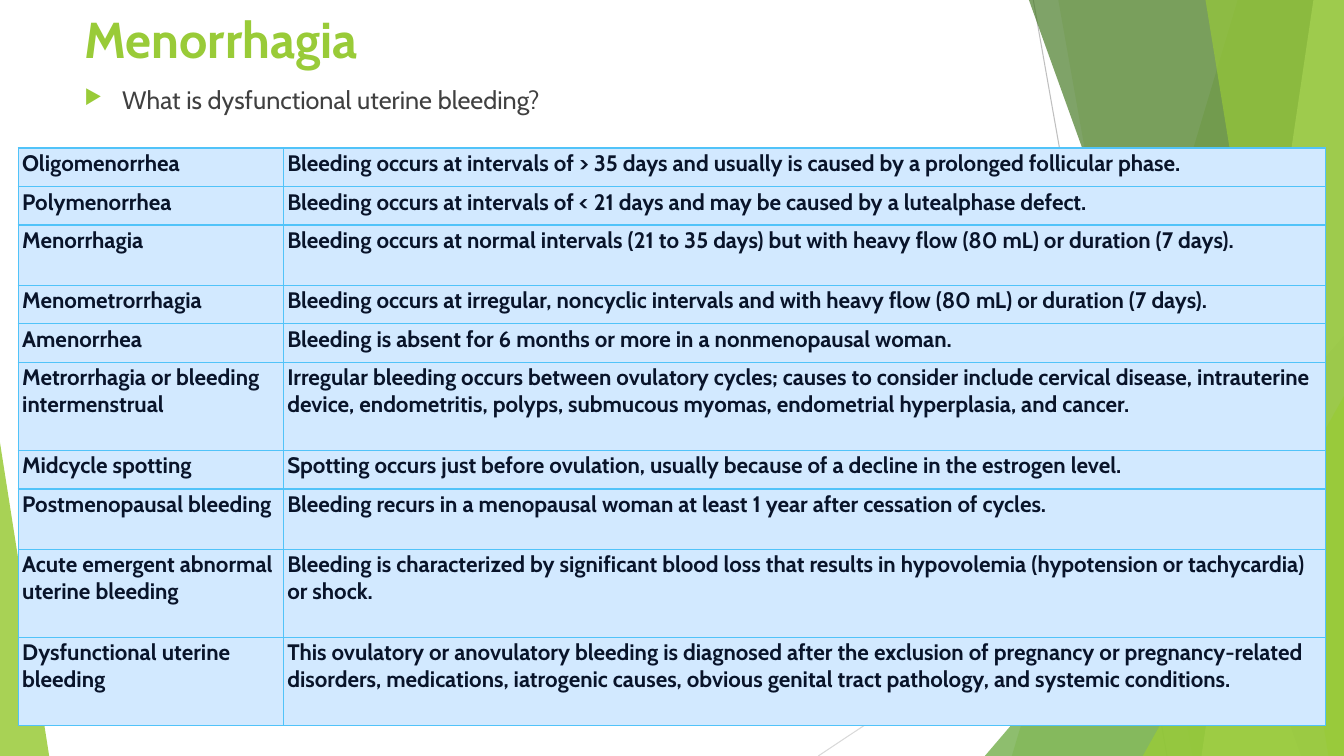
from lxml.etree import SubElement
from pptx import Presentation
from pptx.dml.color import RGBColor
from pptx.enum.shapes import MSO_CONNECTOR as Connector, MSO_SHAPE as Shape
from pptx.enum.text import MSO_ANCHOR as Anchor
from pptx.oxml import parse_xml
from pptx.oxml.ns import nsdecls, qn
from pptx.util import Cm, Pt

WIDTH, HEIGHT = 33.87, 19.05
LIME = RGBColor(0x99, 0xCB, 0x38)
PALE_LIME = RGBColor(0xC2, 0xE0, 0x88)
GREEN = RGBColor(0x63, 0xA5, 0x37)
DARK_GREEN = RGBColor(0x4A, 0x7C, 0x29)
GREY = RGBColor(0xBF, 0xBF, 0xBF)
LIGHT_GREY = RGBColor(0xD9, 0xD9, 0xD9)
CHARCOAL = RGBColor(0x40, 0x40, 0x40)
NAVY = RGBColor(0x09, 0x14, 0x2A)
SKY = RGBColor(0x51, 0xC3, 0xF9)
PALE_BLUE = RGBColor(0xD2, 0xE9, 0xFF)

ONE_LINE, ROOMY, TWO_LINES = 0.97, 1.52, 2.22
TERMS = [
    (ONE_LINE, "Oligomenorrhea",
     "Bleeding occurs at intervals of > 35 days and usually is caused by a prolonged follicular phase."),
    (ONE_LINE, "Polymenorrhea",
     "Bleeding occurs at intervals of < 21 days and may be caused by a lutealphase defect."),
    (ROOMY, "Menorrhagia",
     "Bleeding occurs at normal intervals (21 to 35 days) but with heavy flow (80 mL) or duration (7 days)."),
    (ONE_LINE, "Menometrorrhagia",
     "Bleeding occurs at irregular, noncyclic intervals and with heavy flow (80 mL) or duration (7 days)."),
    (ONE_LINE, "Amenorrhea",
     "Bleeding is absent for 6 months or more in a nonmenopausal woman."),
    (TWO_LINES, "Metrorrhagia or bleeding intermenstrual",
     "Irregular bleeding occurs between ovulatory cycles; causes to consider include cervical disease, "
     "intrauterine device, endometritis, polyps, submucous myomas, endometrial hyperplasia, and cancer."),
    (ONE_LINE, "Midcycle spotting",
     "Spotting occurs just before ovulation, usually because of a decline in the estrogen level."),
    (ROOMY, "Postmenopausal bleeding",
     "Bleeding recurs in a menopausal woman at least 1 year after cessation of cycles."),
    (TWO_LINES, "Acute emergent abnormal uterine bleeding",
     "Bleeding is characterized by significant blood loss that results in hypovolemia "
     "(hypotension or tachycardia) or shock."),
    (TWO_LINES, "Dysfunctional uterine bleeding",
     "This ovulatory or anovulatory bleeding is diagnosed after the exclusion of pregnancy or "
     "pregnancy-related disorders, medications, iatrogenic causes, obvious genital tract pathology, "
     "and systemic conditions."),
]


class SlideBuilder:
    font = "Cabin"

    def __init__(self, slide):
        self.slide = slide
        self.shapes = slide.shapes

    def line(self, start, end, color):
        connector = self.shapes.add_connector(
            Connector.STRAIGHT, *(Cm(value) for value in start + end))
        connector.line.color.rgb = color
        connector.line.width = Pt(0.75)
        SubElement(connector._element.spPr, qn("a:effectLst"))

    def paint(self, shape, color, opacity):
        shape.shadow.inherit = False
        shape.line.fill.background()
        shape.fill.solid()
        shape.fill.fore_color.rgb = color
        fill_color = shape._element.spPr.find(qn("a:solidFill"))[0]
        SubElement(fill_color, qn("a:alpha"), val=str(opacity * 1000))

    def band(self, top_x, bottom_x, color, opacity):
        builder = self.shapes.build_freeform(Cm(top_x), 0)
        corners = [(WIDTH, 0), (WIDTH, HEIGHT), (bottom_x, HEIGHT)]
        builder.add_line_segments([(Cm(x), Cm(y)) for x, y in corners], close=True)
        self.paint(builder.convert_to_shape(), color, opacity)

    def triangle(self, left, top, width, apex, color, opacity):
        shape = self.shapes.add_shape(
            Shape.ISOSCELES_TRIANGLE, Cm(left), Cm(top), Cm(width), Cm(HEIGHT - top))
        shape.adjustments[0] = apex
        self.paint(shape, color, opacity)

    def run(self, paragraph, text, size, color, bold=False):
        run = paragraph.add_run()
        run.text = text
        run.font.name = self.font
        run.font.size = Pt(size)
        run.font.bold = bold
        run.font.color.rgb = color

    def text(self, top, height, text, size, color, bold=False):
        box = self.shapes.add_textbox(Cm(1.88), Cm(top), Cm(23.88), Cm(height))
        box.text_frame.word_wrap = True
        paragraph = box.text_frame.paragraphs[0]
        self.run(paragraph, text, size, color, bold)
        return paragraph

    def bullet(self, top, height, text, size, color):
        paragraph = self.text(top, height, text, size, color)
        paragraph.space_before = Pt(10)
        properties = paragraph._p.get_or_add_pPr()
        properties.set("marL", str(Cm(0.95)))
        properties.set("indent", str(Cm(-0.95)))
        bullet_color = SubElement(properties, qn("a:buClr"))
        SubElement(bullet_color, qn("a:srgbClr"), val=str(LIME))
        SubElement(properties, qn("a:buSzPct"), val="80000")
        SubElement(properties, qn("a:buChar"), char="▶")

    def cell(self, cell, text):
        cell.margin_left = cell.margin_right = Cm(0.1)
        cell.margin_top = cell.margin_bottom = Cm(0.05)
        cell.vertical_anchor = Anchor.TOP
        cell.fill.solid()
        cell.fill.fore_color.rgb = PALE_BLUE
        properties = cell._tc.get_or_add_tcPr()
        for index, side in enumerate("LRTB"):
            properties.insert(index, parse_xml(
                f'<a:ln{side} {nsdecls("a")} w="{Pt(1)}"><a:solidFill>'
                f'<a:srgbClr val="{SKY}"/></a:solidFill></a:ln{side}>'))
        self.run(cell.text_frame.paragraphs[0], text, 16, NAVY, bold=True)

    def table(self, left, top, widths, rows):
        height = sum(row[0] for row in rows)
        table = self.shapes.add_table(
            len(rows), len(widths), Cm(left), Cm(top), Cm(sum(widths)), Cm(height)).table
        table.first_row = table.horz_banding = False
        for column, width in zip(table.columns, widths):
            column.width = Cm(width)
        for table_row, (row_height, *texts) in zip(table.rows, rows):
            table_row.height = Cm(row_height)
            for cell, text in zip(table_row.cells, texts):
                self.cell(cell, text)


def main():
    presentation = Presentation()
    presentation.slide_width, presentation.slide_height = Cm(WIDTH), Cm(HEIGHT)
    builder = SlideBuilder(presentation.slides.add_slide(presentation.slide_layouts[6]))

    builder.line((26.04, 0), (29.41, HEIGHT), GREY)
    builder.line((WIDTH, 10.24), (20.62, HEIGHT), LIGHT_GREY)
    builder.band(31.19, 25.5, LIME, 30)
    builder.band(26.67, 30.05, LIME, 20)
    builder.triangle(24.82, 8.46, 9.05, 1, GREEN, 72)
    builder.band(25.93, 32.79, DARK_GREEN, 70)
    builder.band(33.1, 30.28, PALE_LIME, 70)
    builder.band(30.38, 33.48, LIME, 65)
    builder.triangle(28.8, 9.98, 5.07, 1, LIME, 80)
    builder.triangle(0, 11.15, 1.24, 0, LIME, 85)

    builder.text(0.08, 3.66, "Menorrhagia", 36, LIME, bold=True)
    builder.bullet(2.01, 10.77, "What is dysfunctional uterine bleeding?", 18, CHARCOAL)
    builder.table(0.46, 3.73, (6.68, 26.26), TERMS)
    presentation.save("out.pptx")


if __name__ == "__main__":
    main()
